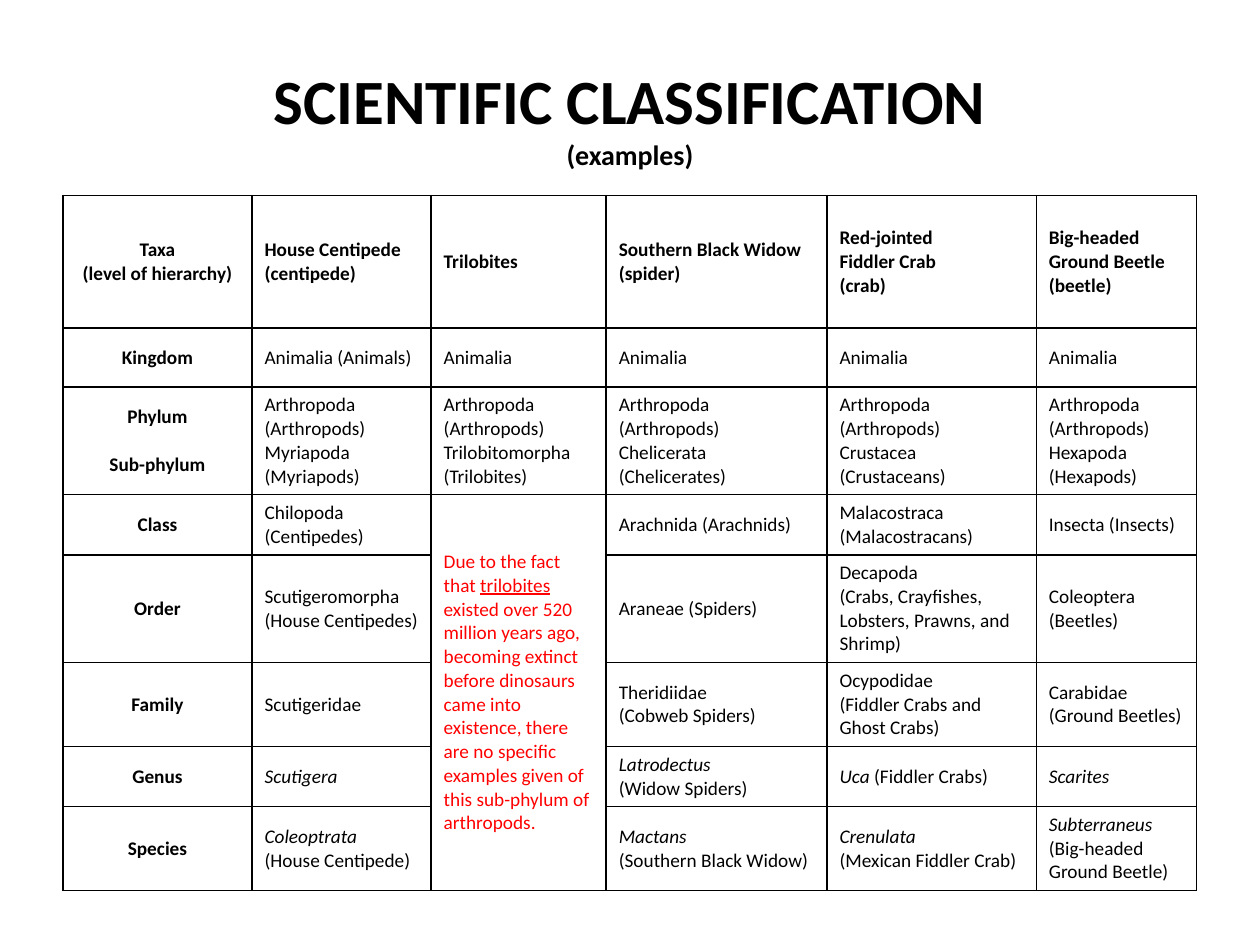
from lxml import etree
from pptx import Presentation
from pptx.dml.color import RGBColor
from pptx.enum.text import MSO_ANCHOR, MSO_AUTO_SIZE, PP_ALIGN
from pptx.oxml.ns import qn
from pptx.util import Cm, Pt

MIDDLE = MSO_ANCHOR.MIDDLE
NO_FIT = MSO_AUTO_SIZE.NONE
CENTER, LEFT = PP_ALIGN.CENTER, PP_ALIGN.LEFT
BLACK = RGBColor(0, 0, 0)
RED = RGBColor(0xFF, 0, 0)
FONT = "Calibri"
BODY_SIZE = 11
BLANK_LINE = Pt(13.4)

COL_WIDTHS = [3.81, 3.61, 3.53, 4.45, 4.22, 3.23]
ROW_HEIGHTS = [2.67, 1.19, 1.88, 1.19, 1.19, 1.12, 1.19, 1.19]
TRILOBITE_COL, FIRST_MERGED, LAST_MERGED = 2, 3, 7

# Text between asterisks is italic, between underscores underlined.
NOTE = ("Due to the fact that _trilobites_ existed over 520 million years ago, "
        "becoming extinct before dinosaurs came into existence, there are no "
        "specific examples given of this sub-phylum of arthropods.")
ROWS = [
    ["Taxa\n(level of hierarchy)", "House Centipede\n(centipede)", "Trilobites",
     "Southern Black Widow\n(spider)", "Red-jointed\nFiddler Crab\n(crab)",
     "Big-headed Ground Beetle\n(beetle)"],
    ["Kingdom", "Animalia (Animals)"] + ["Animalia"] * 4,
    ["Phylum\nSub-phylum"] + ["Arthropoda (Arthropods)\n" + sub for sub in (
        "Myriapoda (Myriapods)", "Trilobitomorpha\n(Trilobites)",
        "Chelicerata (Chelicerates)", "Crustacea (Crustaceans)",
        "Hexapoda (Hexapods)")],
    ["Class", "Chilopoda (Centipedes)", NOTE, "Arachnida (Arachnids)",
     "Malacostraca (Malacostracans)", "Insecta (Insects)"],
    ["Order", "Scutigeromorpha (House Centipedes)", None, "Araneae (Spiders)",
     "Decapoda\n(Crabs, Crayfishes, Lobsters, Prawns, and Shrimp)",
     "Coleoptera (Beetles)"],
    ["Family", "Scutigeridae", None, "Theridiidae\n(Cobweb Spiders)",
     "Ocypodidae\n(Fiddler Crabs and Ghost Crabs)",
     "Carabidae (Ground Beetles)"],
    ["Genus", "*Scutigera*", None, "*Latrodectus*\n(Widow Spiders)",
     "*Uca *(Fiddler Crabs)", "*Scarites*"],
    ["Species", "*Coleoptrata*\n(House Centipede)", None,
     "*Mactans*\n(Southern Black Widow)", "*Crenulata*\n(Mexican Fiddler Crab)",
     "*Subterraneus* (Big-headed Ground Beetle)"],
]


def add_run(p, text, size, color=BLACK, **styles):
    r = p.add_run()
    r.text = text
    r.font.color.rgb = color
    formats = {"name": FONT, "size": Pt(size), "bold": False, **styles}
    for name, value in formats.items():
        setattr(r.font, name, value)


def add_marked_runs(p, text, **styles):
    """Split text at its style marks and add one run for each part."""
    mark, style = ("_", "underline") if "_" in text else ("*", "italic")
    for i, part in enumerate(text.split(mark)):
        if part:
            add_run(p, part, BODY_SIZE, **styles, **{style: i % 2 == 1})


def set_borders(cell):
    tc_pr = cell._tc.get_or_add_tcPr()
    for i, side in enumerate(("lnL", "lnR", "lnT", "lnB")):
        ln = etree.Element(qn("a:" + side), w=str(Pt(1)))
        fill = etree.SubElement(ln, qn("a:solidFill"))
        etree.SubElement(fill, qn("a:srgbClr"), val=str(BLACK))
        tc_pr.insert(i, ln)


def fill_cell(cell, text, align, **styles):
    cell.vertical_anchor = MIDDLE
    tf = cell.text_frame
    for i, line in enumerate(text.split("\n")):
        p = tf.add_paragraph() if i else tf.paragraphs[0]
        p.alignment = align
        if line == "Sub-phylum":
            p.space_before = BLANK_LINE
        add_marked_runs(p, line, **styles)


def add_title(s):
    title = s.shapes.title
    title.left, title.top = Cm(1.27), Cm(0.76)
    title.width, title.height = Cm(22.86), Cm(3.18)
    tf = title.text_frame
    tf.auto_size, tf.vertical_anchor, tf.word_wrap = NO_FIT, MIDDLE, True
    p = tf.paragraphs[0]
    p.alignment = CENTER
    add_run(p, "SCIENTIFIC CLASSIFICATION", 36, bold=True)
    p.add_line_break()
    add_run(p, "(examples)", 16, bold=True)


def add_classification_table(s):
    frame = s.shapes.add_table(len(ROWS), len(COL_WIDTHS), Cm(1.27), Cm(3.94),
                               Cm(22.86), Cm(13.79))
    table = frame.table
    table.first_row = table.horz_banding = False
    for col, width in zip(table.columns, COL_WIDTHS):
        col.width = Cm(width)
    for row, height in zip(table.rows, ROW_HEIGHTS):
        row.height = Cm(height)
    table.cell(FIRST_MERGED, TRILOBITE_COL).merge(
        table.cell(LAST_MERGED, TRILOBITE_COL))
    for i, texts in enumerate(ROWS):
        for j, text in enumerate(texts):
            cell = table.cell(i, j)
            cell.fill.background()
            set_borders(cell)
            if text:
                fill_cell(cell, text, LEFT if j else CENTER,
                          bold=i == 0 or j == 0,
                          color=RED if text == NOTE else BLACK)


def main():
    prs = Presentation()
    prs.slide_width, prs.slide_height = Cm(25.4), Cm(19.05)
    s = prs.slides.add_slide(prs.slide_layouts[5])
    add_title(s)
    add_classification_table(s)
    prs.save("out.pptx")


if __name__ == "__main__":
    main()
